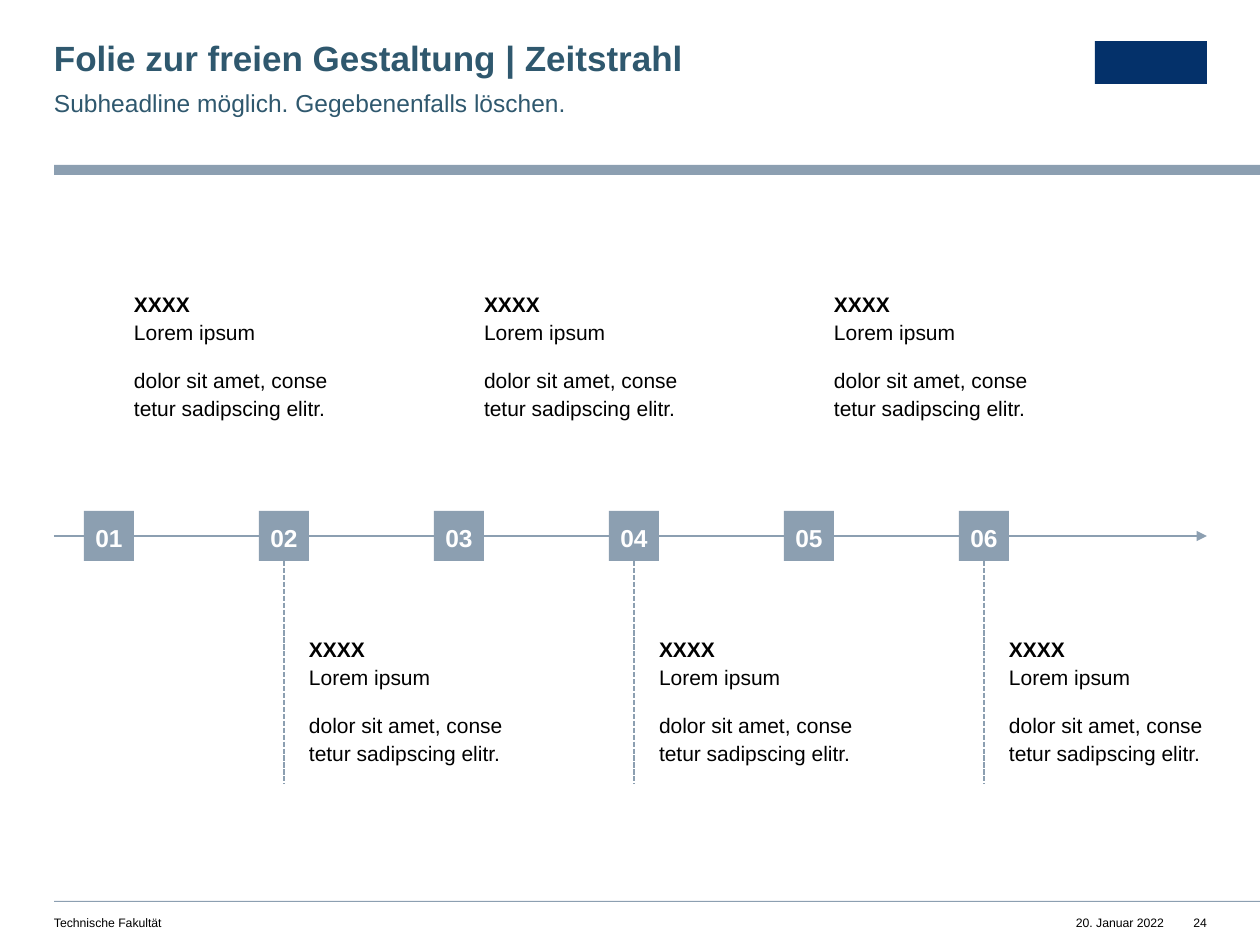
import pptx
import pptx.dml.color
import pptx.enum.dml
import pptx.enum.shapes
import pptx.enum.text
import pptx.oxml.ns
import pptx.oxml.xmlchemy
import pptx.util

RGBColor = pptx.dml.color.RGBColor
Align = pptx.enum.text.PP_ALIGN
Anchor = pptx.enum.text.MSO_ANCHOR

STEEL = RGBColor(0x8C, 0x9F, 0xB1)
PETROL = RGBColor(0x2F, 0x58, 0x6E)
NAVY = RGBColor(0x04, 0x31, 0x6A)
BLACK = RGBColor(0, 0, 0)
WHITE = RGBColor(0xFF, 0xFF, 0xFF)

PX_PER_INCH = 126
LEFT, RIGHT, SLIDE_WIDTH = 54, 1207, 1260
MARKER, FIRST_MARKER, MARKER_PITCH = 50, 84, 175
AXIS_Y = 536
LABEL_TOPS = (289, 634)
STEM_BOTTOM = 784


def px(length):
    return pptx.util.Emu(round(length * 914400 / PX_PER_INCH))


class TimelineSlide:
    """Draws styled elements on one slide, with lengths in px."""

    font_name = "Arial"

    def __init__(self, slide):
        self.slide = slide

    def style(self, paragraph, size, color, bold=None, align=Align.LEFT, spacing=1.0, after=0):
        paragraph.font.name = self.font_name
        paragraph.font.size = pptx.util.Pt(size)
        paragraph.font.color.rgb = color
        paragraph.font.bold = bold
        paragraph.alignment = align
        paragraph.line_spacing = spacing
        paragraph.space_after = pptx.util.Pt(after)

    def frame(self, holder, wrap=True, anchor=Anchor.TOP):
        frame = holder.text_frame
        frame.margin_left = frame.margin_top = frame.margin_right = frame.margin_bottom = 0
        frame.word_wrap = wrap
        frame.vertical_anchor = anchor
        return frame

    def box(self, left, top, width, height, wrap=True):
        holder = self.slide.shapes.add_textbox(px(left), px(top), px(width), px(height))
        return self.frame(holder, wrap)

    def text(self, left, top, width, height, words, size, color, wrap=True, **look):
        paragraph = self.box(left, top, width, height, wrap).paragraphs[0]
        paragraph.text = words
        self.style(paragraph, size, color, **look)

    def block(self, left, top, width, height, color):
        block = self.slide.shapes.add_shape(
            pptx.enum.shapes.MSO_SHAPE.RECTANGLE, px(left), px(top), px(width), px(height))
        block.shadow.inherit = False
        block.fill.solid()
        block.fill.fore_color.rgb = color
        block.line.fill.background()
        return block

    def marker(self, left, number):
        marker = self.block(left, AXIS_Y - MARKER // 2, MARKER, MARKER, STEEL)
        paragraph = self.frame(marker, anchor=Anchor.MIDDLE).paragraphs[0]
        paragraph.text = f"{number:02d}"
        self.style(paragraph, 14, WHITE, True, Align.CENTER, 1.1, 12)
        return marker

    def label(self, left, top):
        frame = self.box(left, top, 195, 131, wrap=False)
        heading = frame.paragraphs[0]
        heading.add_run().text = "XXXX"
        heading.runs[0].font.bold = True
        heading.add_line_break()
        heading.add_run().text = "Lorem ipsum"
        body = frame.add_paragraph()
        body.text = "dolor sit amet, conse\vtetur sadipscing elitr."
        for paragraph in frame.paragraphs:
            self.style(paragraph, 12, BLACK, spacing=1.1, after=12)

    def line(self, x1, y1, x2, y2):
        line = self.slide.shapes.add_connector(
            pptx.enum.shapes.MSO_CONNECTOR.STRAIGHT, px(x1), px(y1), px(x2), px(y2))
        line.line.color.rgb = STEEL
        line.line.width = pptx.util.Pt(1)
        line._element.spPr.append(pptx.oxml.xmlchemy.OxmlElement("a:effectLst"))
        return line

    def arrow(self, x1, y1, x2, y2):
        arrow = self.line(x1, y1, x2, y2)
        outline = arrow._element.spPr.find(pptx.oxml.ns.qn("a:ln"))
        head = pptx.oxml.xmlchemy.OxmlElement("a:tailEnd")
        head.set("type", "triangle")
        outline.append(head)

    def stem(self, marker, x):
        stem = self.line(x, AXIS_Y + MARKER // 2, x, STEM_BOTTOM)
        stem.line.dash_style = pptx.enum.dml.MSO_LINE.SQUARE_DOT
        stem.begin_connect(marker, 2)


def main():
    deck = pptx.Presentation()
    deck.slide_width = px(SLIDE_WIDTH)
    deck.slide_height = px(945)
    page = TimelineSlide(deck.slides.add_slide(deck.slide_layouts[6]))

    page.block(LEFT, 165, SLIDE_WIDTH - LEFT, 10, STEEL)
    page.block(LEFT, 901, SLIDE_WIDTH - LEFT, 1, STEEL)
    page.block(1095, 41, 112, 43, NAVY)

    page.text(LEFT, 41, 707, 38, "Folie zur freien Gestaltung | Zeitstrahl",
              20, PETROL, bold=True, spacing=0.9)
    page.text(LEFT, 85, 707, 30, "Subheadline möglich. Gegebenenfalls löschen.",
              14, PETROL, spacing=1.1, after=8)
    page.text(LEFT, 915, 566, 15, "Technische Fakultät", 7, BLACK)
    page.text(1075, 915, 89, 15, "20. Januar 2022", 7, BLACK, wrap=False, align=Align.RIGHT)
    page.text(1182, 915, 25, 15, "24", 7, BLACK, wrap=False, align=Align.RIGHT)

    page.arrow(LEFT, AXIS_Y, RIGHT, AXIS_Y)
    for step in range(6):
        left = FIRST_MARKER + step * MARKER_PITCH
        below = step % 2
        marker = page.marker(left, step + 1)
        page.label(left + MARKER, LABEL_TOPS[below])
        if below:
            page.stem(marker, left + MARKER // 2)

    deck.save("out.pptx")


if __name__ == "__main__":
    main()
